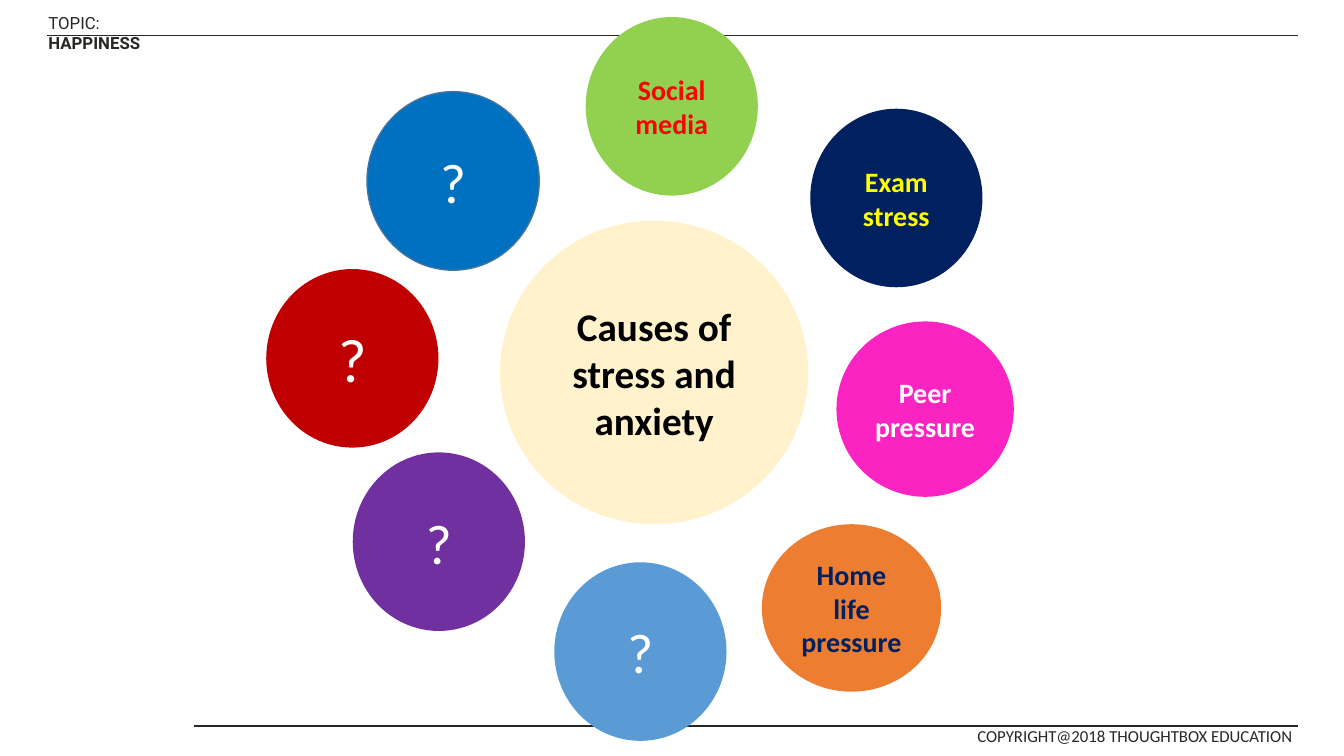
from dataclasses import dataclass

from lxml.etree import SubElement
from pptx import Presentation
from pptx.dml.color import RGBColor
from pptx.enum.shapes import MSO_CONNECTOR, MSO_SHAPE
from pptx.enum.text import MSO_ANCHOR, PP_ALIGN
from pptx.oxml.ns import qn
from pptx.util import Cm, Pt


@dataclass(frozen=True)
class Theme:
    body_font: str = "Calibri"
    topic_font: str = "Roboto"
    ink: str = "252823"
    black: str = "000000"
    white: str = "FFFFFF"
    cream: str = "FFF2CC"
    navy: str = "002060"
    yellow: str = "FFFF00"
    pink: str = "FB23C2"
    green: str = "92D050"
    bright_red: str = "FF0000"
    orange: str = "ED7D31"
    dark_red: str = "C00000"
    purple: str = "7030A0"
    light_blue: str = "5B9BD5"
    blue: str = "0070C0"
    blue_outline: str = "43739E"
    small: int = 12
    cause: int = 20
    centre: int = 28
    question: int = 40
    large_question: int = 44


THEME = Theme()
CIRCLE_SIZE = (4.34, 4.5)


def color(value):
    return RGBColor.from_string(value)


def add_run(paragraph, text, *, size, ink, font=THEME.body_font, bold=False):
    run = paragraph.add_run()
    run.text = text
    run.font.name = font
    run.font.size = Pt(size)
    run.font.bold = bold
    run.font.color.rgb = color(ink)


def add_text(slide, left, top, width, height, runs, font):
    """Add a one-paragraph text box from (text, bold) pairs."""
    box = slide.shapes.add_textbox(Cm(left), Cm(top), Cm(width), Cm(height))
    box.text_frame.word_wrap = True
    for text, bold in runs:
        add_run(box.text_frame.paragraphs[0], text, size=THEME.small,
                ink=THEME.ink, font=font, bold=bold)


def add_rule(slide, left, right, top):
    rule = slide.shapes.add_connector(
        MSO_CONNECTOR.STRAIGHT, Cm(left), Cm(top), Cm(right), Cm(top))
    rule.line.color.rgb = color(THEME.ink)
    rule.line.width = Pt(1)
    SubElement(rule._element.spPr, qn("a:effectLst"))


def add_circle(slide, text, left, top, fill, *, extent=CIRCLE_SIZE,
               ink=THEME.white, size=THEME.cause, bold=True, outline=None):
    width, height = extent
    shape = slide.shapes.add_shape(
        MSO_SHAPE.OVAL, Cm(left), Cm(top), Cm(width), Cm(height))
    shape.shadow.inherit = False
    shape.fill.solid()
    shape.fill.fore_color.rgb = color(fill)
    if outline:
        shape.line.color.rgb = color(outline)
        shape.line.width = Pt(1)
    else:
        shape.line.fill.background()
    frame = shape.text_frame
    frame.word_wrap = True
    frame.vertical_anchor = MSO_ANCHOR.MIDDLE
    paragraph = frame.paragraphs[0]
    paragraph.alignment = PP_ALIGN.CENTER
    add_run(paragraph, text, size=size, ink=ink, bold=bold)


def add_question(slide, left, top, fill, *, size=THEME.question, outline=None):
    add_circle(slide, "?", left, top, fill, size=size, bold=False, outline=outline)


def main():
    presentation = Presentation()
    presentation.slide_width = Cm(33.87)
    presentation.slide_height = Cm(19.05)
    slide = presentation.slides.add_slide(presentation.slide_layouts[6])

    # Header and footer
    add_text(slide, 0.97, 0.2, 3.86, 0.76,
             [("TOPIC: ", False), ("HAPPINESS", True)], THEME.topic_font)
    add_rule(slide, 1.19, 32.72, 0.89)
    add_text(slide, 24.38, 18.16, 8.64, 0.79,
             [("COPYRIGHT@2018 THOUGHTBOX EDUCATION", False)], THEME.body_font)
    add_rule(slide, 4.88, 32.72, 18.29)

    # Central theme
    add_circle(slide, "Causes of stress and anxiety", 12.6, 5.56, THEME.cream,
               extent=(7.77, 7.65), ink=THEME.black, size=THEME.centre)

    # Named causes
    add_circle(slide, "Exam stress", 20.42, 2.74, THEME.navy, ink=THEME.yellow)
    add_circle(slide, "Peer pressure", 21.08, 8.1, THEME.pink, extent=(4.47, 4.42))
    add_circle(slide, "Social media", 14.76, 0.43, THEME.green, ink=THEME.bright_red)
    add_circle(slide, "Home life pressure", 19.2, 13.21, THEME.orange,
               extent=(4.52, 4.22), ink=THEME.navy)

    # Causes still to be found
    add_question(slide, 6.71, 6.78, THEME.dark_red, size=THEME.large_question)
    add_question(slide, 8.89, 11.4, THEME.purple)
    add_question(slide, 13.97, 14.17, THEME.light_blue)
    add_question(slide, 9.25, 2.31, THEME.blue, outline=THEME.blue_outline)

    presentation.save("out.pptx")


if __name__ == "__main__":
    main()
